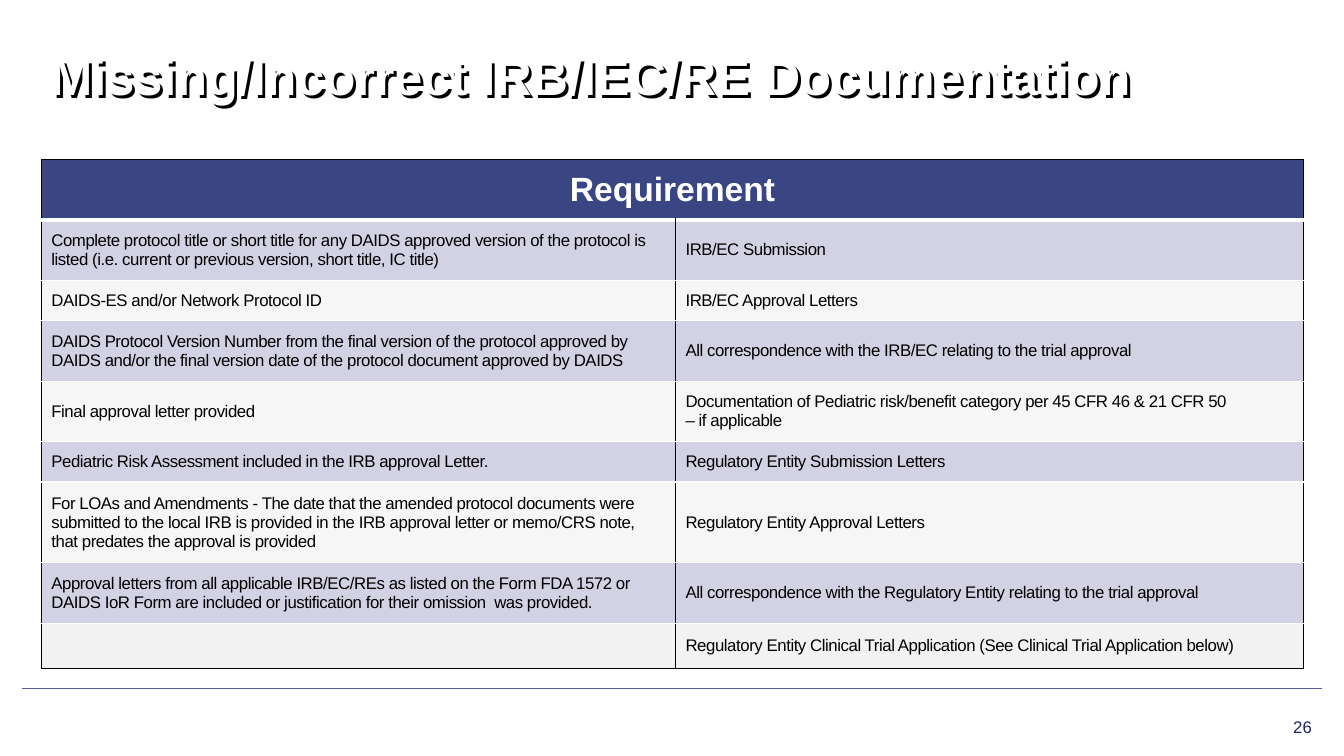
import pptx
import pptx.util
import pptx.dml.color
import pptx.enum.shapes
import pptx.enum.text
import pptx.oxml
import pptx.oxml.ns
from lxml import etree

Inches, Pt = pptx.util.Inches, pptx.util.Pt
ALIGN, ANCHOR = pptx.enum.text.PP_ALIGN, pptx.enum.text.MSO_ANCHOR

# Content
TITLE = "Missing/Incorrect IRB/IEC/RE Documentation"
HEADER = "Requirement"
PAGE = "26"
ROWS = [
    ("Complete protocol title or short title for any DAIDS approved version of the protocol is "
     "listed (i.e. current or previous version, short title, IC title)",
     "IRB/EC Submission"),
    ("DAIDS-ES and/or Network Protocol ID", "IRB/EC Approval Letters"),
    ("DAIDS Protocol Version Number from the final version of the protocol approved by "
     "DAIDS and/or the final version date of the protocol document approved by DAIDS",
     "All correspondence with the IRB/EC relating to the trial approval"),
    ("Final approval letter provided",
     "Documentation of Pediatric risk/benefit category per 45 CFR 46 & 21 CFR 50\v– if applicable"),
    ("Pediatric Risk Assessment included in the IRB approval Letter.",
     "Regulatory Entity Submission Letters"),
    ("For LOAs and Amendments - The date that the amended protocol documents were "
     "submitted to the local IRB is provided in the IRB approval letter or memo/CRS note, "
     "that predates the approval is provided",
     "Regulatory Entity Approval Letters"),
    ("Approval letters from all applicable IRB/EC/REs as listed on the Form FDA 1572 or "
     "DAIDS IoR Form are included or justification for their omission  was provided.",
     "All correspondence with the Regulatory Entity relating to the trial approval"),
    ("", "Regulatory Entity Clinical Trial Application (See Clinical Trial Application below)"),
]
COL_WIDTHS = [6.29, 6.23]
ROW_HEIGHTS = [0.58, 0.59, 0.38, 0.59, 0.59, 0.38, 0.79, 0.59, 0.45]
BANDS = ["D2D2E4", "F6F6F6"]
LAST_FILL = "F2F2F2"

# Formats
TITLE_FONT = {"size": Pt(36), "bold": True, "name": "Arial"}
HEADER_FONT = {"size": Pt(24), "bold": True, "name": "Arial"}
BODY_FONT = {"size": Pt(12), "bold": False, "name": "Arial"}


def rgb(value):
    return pptx.dml.color.RGBColor.from_string(value)


def write(tf, text, font, color, align=ALIGN.LEFT):
    p = tf.paragraphs[0]
    p.text = text
    p.alignment = align
    for r in p.runs:
        for key, value in font.items():
            setattr(r.font, key, value)
        r.font.color.rgb = rgb(color)
    if not p.runs:
        end = etree.SubElement(p._p, pptx.oxml.ns.qn("a:endParaRPr"))
        end.set("sz", str(int(font["size"].pt * 100)))
    return p


def text_box(box, text, font, color, anchor, inset, align=ALIGN.LEFT):
    shape = s.shapes.add_textbox(*map(Inches, box))
    tf = shape.text_frame
    tf.word_wrap = True
    tf.vertical_anchor = anchor
    tf.margin_left = tf.margin_right = Inches(inset)
    write(tf, text, font, color, align)
    return shape


def border(cell, sides):
    tcPr = cell._tc.get_or_add_tcPr()
    for i, (side, (color, width)) in enumerate(sides.items()):
        tcPr.insert(i, pptx.oxml.parse_xml(
            f'<a:ln{side} {pptx.oxml.ns.nsdecls("a")} w="{Pt(width)}"><a:solidFill>'
            f'<a:srgbClr val="{color}"/></a:solidFill></a:ln{side}>'))


def style_cell(cell, fill, top, bottom):
    cell.fill.solid()
    cell.fill.fore_color.rgb = rgb(fill)
    cell.vertical_anchor = ANCHOR.MIDDLE
    for side in ("left", "right", "top", "bottom"):
        setattr(cell, "margin_" + side, Inches(0.1))
    border(cell, {"L": ("000000", 1), "R": ("000000", 1), "T": top, "B": bottom})


prs = pptx.Presentation()
prs.slide_width, prs.slide_height = Inches(13.33), Inches(7.5)
s = prs.slides.add_slide(prs.slide_layouts[6])

# Footer rule
rule = s.shapes.add_connector(pptx.enum.shapes.MSO_CONNECTOR.STRAIGHT,
                              Inches(0.22), Inches(6.83), Inches(13.11), Inches(6.83))
rule.line.color.rgb = rgb("555EA6")
rule.line.width = Pt(1)
etree.SubElement(rule._element.spPr, pptx.oxml.ns.qn("a:effectLst"))

# Title: white letters that cast a hard black shadow
title = text_box((0, 0, 13.33, 1.49), TITLE, TITLE_FONT, "FFFFFF", ANCHOR.MIDDLE, 0.5)
title._element.spPr.append(pptx.oxml.parse_xml(
    f'<a:effectLst {pptx.oxml.ns.nsdecls("a")}><a:outerShdw dist="{Pt(3)}" dir="2700000" '
    'algn="tl" rotWithShape="0"><a:srgbClr val="000000"/></a:outerShdw></a:effectLst>'))

# Requirement table
table = s.shapes.add_table(len(ROW_HEIGHTS), 2, Inches(0.41), Inches(1.58),
                           Inches(sum(COL_WIDTHS)), Inches(sum(ROW_HEIGHTS))).table
for col, width in zip(table.columns, COL_WIDTHS):
    col.width = Inches(width)
for row, height in zip(table.rows, ROW_HEIGHTS):
    row.height = Inches(height)

table.cell(0, 0).merge(table.cell(0, 1))
for c in range(2):
    style_cell(table.cell(0, c), "3A4583", ("000000", 1), ("FFFFFF", 3))
write(table.cell(0, 0).text_frame, HEADER, HEADER_FONT, "FFFFFF", ALIGN.CENTER)

for i, texts in enumerate(ROWS):
    last = i == len(ROWS) - 1
    for c, text in enumerate(texts):
        cell = table.cell(i + 1, c)
        style_cell(cell, LAST_FILL if last else BANDS[i % 2],
                   ("FFFFFF", 1 if i else 3), ("000000" if last else "FFFFFF", 1))
        p = write(cell.text_frame, text, BODY_FONT, "000000")
        for r in p.runs:
            r.font._element.set("spc", "-30")

# Page number
text_box((10.11, 6.92, 3, 0.44), PAGE, BODY_FONT, "222267", ANCHOR.BOTTOM, 0.1, ALIGN.RIGHT)

prs.save("out.pptx")
